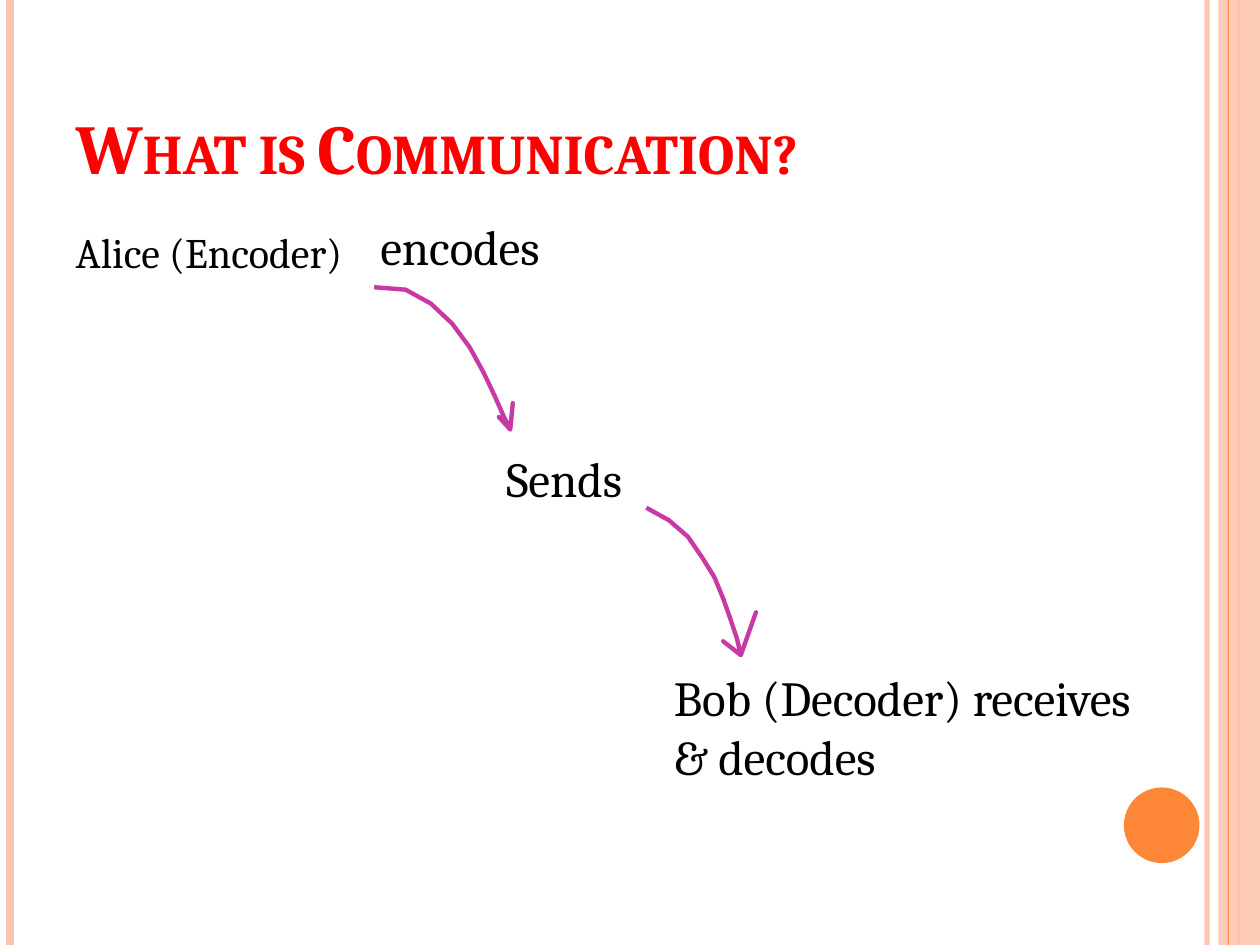
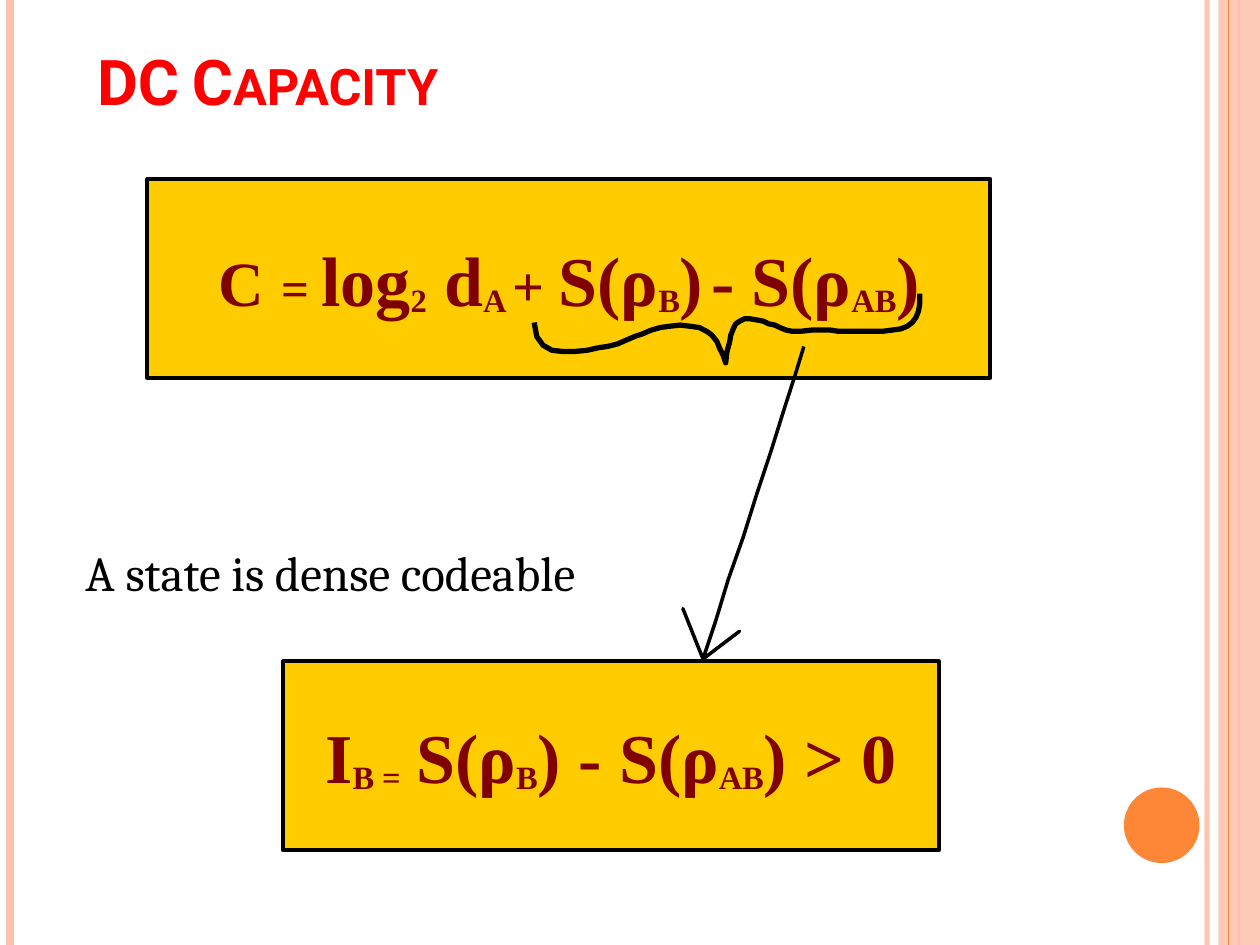
"""Build two slides about communication and dense coding capacity."""
from lxml.etree import SubElement
from pptx import Presentation
from pptx.dml.color import RGBColor
from pptx.enum.shapes import MSO_CONNECTOR, MSO_SHAPE
from pptx.enum.text import MSO_ANCHOR, MSO_AUTO_SIZE, PP_ALIGN
from pptx.oxml.ns import qn
from pptx.util import Inches, Pt

PEACH = RGBColor(0xFE, 0xC3, 0xAE)
ORANGE = RGBColor(0xFE, 0x86, 0x37)
RED = RGBColor(0xFF, 0x00, 0x00)
BLACK = RGBColor(0x00, 0x00, 0x00)
MAROON = RGBColor(0x80, 0x00, 0x00)
GOLD = RGBColor(0xFF, 0xCC, 0x00)
MAGENTA = RGBColor(0xCA, 0x38, 0xA4)

presentation = Presentation()
presentation.slide_width = Inches(10)
presentation.slide_height = Inches(7.5)
COLUMNS = 1000
GRID = presentation.slide_width // COLUMNS
ROWS = presentation.slide_height // GRID


def grid(*cells):
    """Turn grid columns and rows into lengths."""
    return [cell * GRID for cell in cells]


def write(paragraph, text, size=28, font="Cambria", color=BLACK, bold=False, baseline=0, small_caps=False):
    """Add a formatted run to a paragraph."""
    run = paragraph.add_run()
    run.text = text
    run.font.size = Pt(size)
    run.font.name = font
    run.font.bold = bold
    run.font.color.rgb = color
    properties = run.font._element
    if baseline:
        properties.set("baseline", str(baseline * 1000))
    if small_caps:
        properties.set("cap", "small")


PANE_LEFT = 967
BAND_SHAPES = [
    (MSO_SHAPE.RECTANGLE, (PANE_LEFT, 0, COLUMNS - PANE_LEFT, ROWS), PEACH, 87),
    (MSO_SHAPE.OVAL, (892, 625, 60, 60), ORANGE, 100),
]
BAND_LINES = [(958, PEACH, 3, 93), (8, PEACH, 4.5, 100), (983, ORANGE, 1.5, 13), (975, ORANGE, 0.75, 100)]
TITLE_AND_BODY, TITLE_ONLY = presentation.slide_layouts[1], presentation.slide_layouts[5]
TITLES = [
    ("What is Communication?", TITLE_AND_BODY, (50, 30, 817, 125), 40, "Cambria"),
    ("DC Capacity", TITLE_ONLY, (67, 0, 874, 99), 36, "Roboto"),
]

for text, layout, cells, size, font in TITLES:
    slide = presentation.slides.add_slide(layout)
    title = slide.shapes.title
    title.left, title.top, title.width, title.height = grid(*cells)
    title.text_frame.vertical_anchor = MSO_ANCHOR.BOTTOM
    title.text_frame.auto_size = MSO_AUTO_SIZE.NONE
    paragraph = title.text_frame.paragraphs[0]
    paragraph.alignment = PP_ALIGN.LEFT
    write(paragraph, text, size=size, font=font, color=RED, bold=True, small_caps=True)

    bands = []
    for preset, cells, color, opacity in BAND_SHAPES:
        shape = slide.shapes.add_shape(preset, *grid(*cells))
        shape.shadow.inherit = False
        shape.fill.solid()
        shape.fill.fore_color.rgb = color
        shape.line.fill.background()
        bands.append((shape, opacity))
    for column, color, width, opacity in BAND_LINES:
        line = slide.shapes.add_connector(MSO_CONNECTOR.STRAIGHT, *grid(column, 0, column, ROWS))
        line.line.color.rgb = color
        line.line.width = Pt(width)
        SubElement(line._element.spPr, qn("a:effectLst"))
        bands.append((line, opacity))
    for band, opacity in bands:
        tint = next(band._element.spPr.iter(qn("a:srgbClr")))
        SubElement(tint, qn("a:alpha"), val=str(opacity * 1000))

communication, capacity = presentation.slides

HANGING_INDENT = 30
body = communication.placeholders[1]
body.left, body.top, body.width, body.height = grid(50, 175, 817, 533)
paragraph = body.text_frame.paragraphs[0]
paragraph.space_before = Pt(6)
properties = paragraph._p.get_or_add_pPr()
for name, length in zip(("marL", "indent"), grid(HANGING_INDENT, -HANGING_INDENT)):
    properties.set(name, str(length))
SubElement(properties, qn("a:buNone"))
write(paragraph, "Alice (Encoder)", size=24)

ONE_LINE, TWO_LINES = 57, 104
LABELS = [
    (communication, "encodes", (292, 167, 192, ONE_LINE)),
    (communication, "Sends", (392, 351, 192, ONE_LINE)),
    (communication, "Bob (Decoder) receives & decodes", (525, 525, 392, TWO_LINES)),
    (capacity, "A state is dense codeable", (58, 426, 472, ONE_LINE)),
]
for slide, text, cells in LABELS:
    label = slide.shapes.add_textbox(*grid(*cells))
    label.text_frame.word_wrap = True
    label.text_frame.auto_size = MSO_AUTO_SIZE.SHAPE_TO_FIT_TEXT
    write(label.text_frame.paragraphs[0], text)

LARGE = {"size": 40}
MEDIUM = {"size": 36}
OPERATOR = {"size": 32}
EQUALS = {"size": 28}
SPACER = {"size": 18}
SUBSCRIPT = {"size": 32, "baseline": -10}
CAPACITY_FORMULA = [
    ("C", MEDIUM), (" ", LARGE), ("= ", EQUALS), ("log", LARGE), ("2", SUBSCRIPT), (" d", LARGE),
    ("A ", SUBSCRIPT), ("+ ", OPERATOR), ("S(ρ", LARGE), ("B", SUBSCRIPT), (")", LARGE), (" ", SPACER),
    ("- S(ρ", LARGE), ("AB", SUBSCRIPT), (")", LARGE),
]
CODEABLE_CONDITION = [
    ("I", LARGE), ("B = ", SUBSCRIPT), (" ", SPACER), ("S(ρ", LARGE), ("B", SUBSCRIPT),
    (") - S(ρ", LARGE), ("AB", SUBSCRIPT), (") > 0", LARGE),
]
FORMULA_BOXES = [
    (CAPACITY_FORMULA, (117, 142, 669, 158)),
    (CODEABLE_CONDITION, (225, 525, 520, 150)),
]
for formula, cells in FORMULA_BOXES:
    box = capacity.shapes.add_shape(MSO_SHAPE.RECTANGLE, *grid(*cells))
    box.shadow.inherit = False
    box.fill.solid()
    box.fill.fore_color.rgb = GOLD
    box.line.color.rgb = BLACK
    box.line.width = Pt(2.25)
    box.text_frame.word_wrap = False
    box.text_frame.vertical_anchor = MSO_ANCHOR.MIDDLE
    paragraph = box.text_frame.paragraphs[0]
    paragraph.alignment = PP_ALIGN.CENTER
    for text, style in formula:
        write(paragraph, text, font="Times New Roman", color=MAROON, bold=True, **style)

CURVE_STEPS = 8
ENCODE_ARROW = {
    "start": (297, 228),
    "curves": [((368, 222), (393, 324), (405, 341))],
    "barbs": [(396, 331), (407, 320)],
}
SEND_ARROW = {
    "start": (513, 403),
    "curves": [((565, 425), (580, 489), (588, 520))],
    "barbs": [(574, 509), (600, 486)],
}
CONDITION_ARROW = {
    "start": (638, 275),
    "curves": [((622, 330), (582, 447), (558, 523))],
    "barbs": [(542, 483), (587, 501)],
}
BRACE = {
    "start": (424, 256),
    "curves": [
        ((424, 290), (465, 278), (482, 275)),
        ((505, 270), (515, 258), (540, 258)),
        ((565, 258), (570, 270), (576, 288)),
        ((580, 262), (582, 253), (595, 253)),
        ((612, 254), (617, 263), (635, 263)),
        ((660, 260), (670, 265), (700, 263)),
        ((725, 262), (730, 255), (730, 233)),
    ],
    "barbs": [],
}
STROKES = [
    (communication, ENCODE_ARROW, MAGENTA, 2.5),
    (communication, SEND_ARROW, MAGENTA, 2.5),
    (capacity, BRACE, BLACK, 3),
    (capacity, CONDITION_ARROW, BLACK, 2),
]
for slide, outline, color, width in STROKES:
    points = [outline["start"]]
    for curve in outline["curves"]:
        controls = [points[-1], *curve]
        for step in range(1, CURVE_STEPS + 1):
            ahead = step / CURVE_STEPS
            behind = 1 - ahead
            weights = (behind**3, 3 * behind**2 * ahead, 3 * behind * ahead**2, ahead**3)
            points.append(tuple(
                sum(weight * value for weight, value in zip(weights, values)) for values in zip(*controls)))
    tip = points[-1]
    for barb in outline["barbs"]:
        points += [barb, tip]

    builder = slide.shapes.build_freeform(*points[0], scale=GRID)
    builder.add_line_segments(points[1:], close=False)
    stroke = builder.convert_to_shape()
    stroke.shadow.inherit = False
    stroke.fill.background()
    stroke.line.color.rgb = color
    stroke.line.width = Pt(width)

presentation.save("out.pptx")
